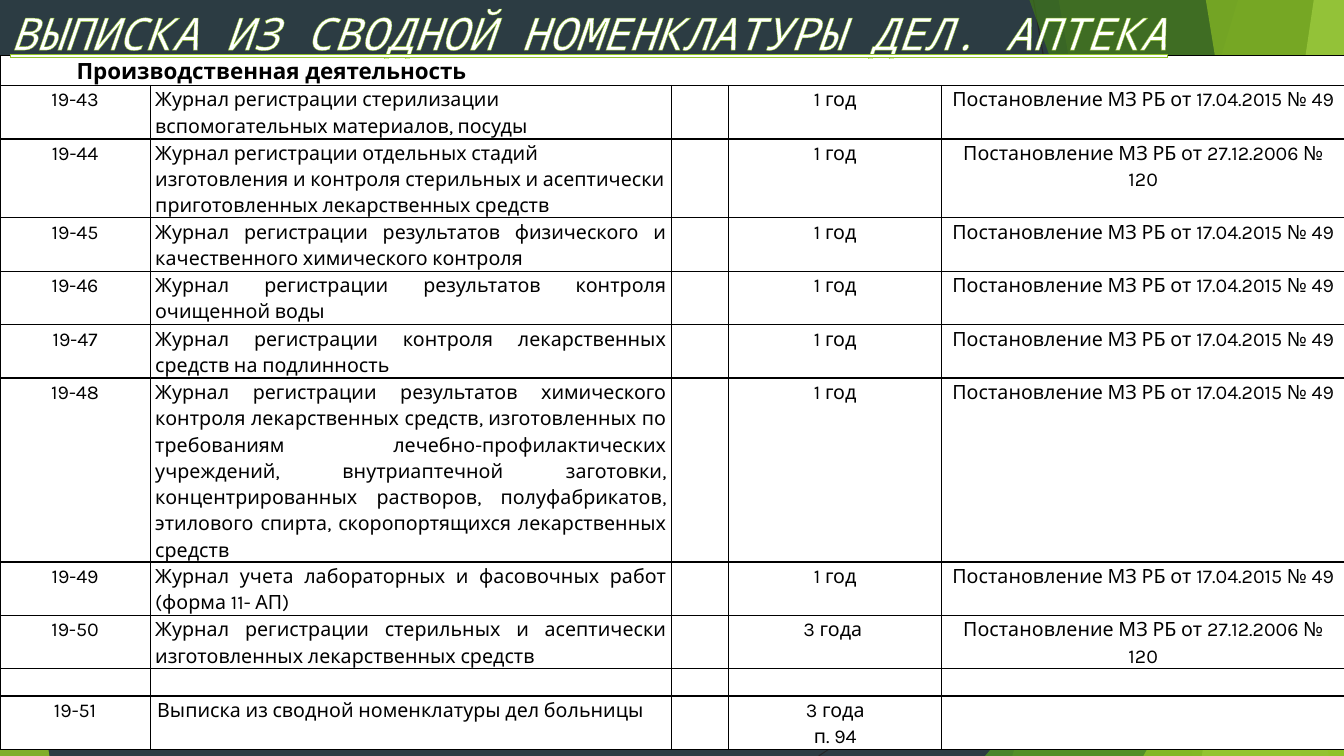
from lxml.etree import SubElement
from pptx import Presentation
from pptx.dml.color import RGBColor
from pptx.enum.shapes import MSO_CONNECTOR, MSO_SHAPE
from pptx.enum.text import MSO_ANCHOR, PP_ALIGN
from pptx.oxml.ns import qn
from pptx.util import Inches, Pt

WHITE = RGBColor(0xFF, 0xFF, 0xFF)
BLACK = RGBColor(0, 0, 0)
SLATE = RGBColor(0x2C, 0x3C, 0x43)
COAL = RGBColor(0x26, 0x26, 0x26)
LIME = RGBColor(0x90, 0xC2, 0x26)
GREEN = RGBColor(0x54, 0xA0, 0x21)
DARK = RGBColor(0x3F, 0x78, 0x19)
PALE = RGBColor(0xC0, 0xE4, 0x74)

WIDE, HIGH = 13.33, 7.5
TITLE = "ВЫПИСКА ИЗ СВОДНОЙ НОМЕНКЛАТУРЫ ДЕЛ. АПТЕКА"
SECTION = "Производственная деятельность"
ACT_2015 = "Постановление МЗ РБ от 17.04.2015 № 49"
ACT_2006 = "Постановление МЗ РБ от 27.12.2006 № 120"
LEFT, MID, FULL = PP_ALIGN.LEFT, PP_ALIGN.CENTER, PP_ALIGN.JUSTIFY

# index, journal, alignment of the journal, storage term, legal act, row height
RECORDS = [
    ("19-43", "Журнал регистрации стерилизации вспомогательных материалов, посуды",
     LEFT, "1 год", ACT_2015, 0.53),
    ("19-44", "Журнал регистрации отдельных стадий изготовления и контроля стерильных "
     "и асептически приготовленных лекарственных средств",
     LEFT, "1 год", ACT_2006, 0.53),
    ("19-45", "Журнал регистрации результатов физического и качественного "
     "химического контроля", FULL, "1 год", ACT_2015, 0.53),
    ("19-46", "Журнал регистрации результатов контроля очищенной воды",
     FULL, "1 год", ACT_2015, 0.53),
    ("19-47", "Журнал регистрации контроля лекарственных средств на подлинность",
     FULL, "1 год", ACT_2015, 0.53),
    ("19-48", "Журнал регистрации результатов химического контроля лекарственных "
     "средств, изготовленных по требованиям лечебно-профилактических учреждений, "
     "внутриаптечной заготовки, концентрированных растворов, полуфабрикатов, "
     "этилового спирта, скоропортящихся лекарственных средств",
     FULL, "1 год", ACT_2015, 1.62),
    ("19-49", "Журнал учета лабораторных и фасовочных работ (форма 11- АП)",
     FULL, "1 год", ACT_2015, 0.53),
    ("19-50", "Журнал регистрации стерильных и асептически изготовленных "
     "лекарственных средств", FULL, "3 года ", ACT_2006, 0.53),
    ("", "", FULL, "", "", 0.27),
    ("19-51", "Выписка из сводной номенклатуры дел больницы",
     FULL, "3 года\nп. 94", "", 0.53),
]
COLS = [1.49, 5.17, 0.57, 2.11, 4]
HEAD = 0.29

RAYS = [((10.25, 0), (11.58, HIGH)), ((WIDE, 4.03), (8.12, HIGH))]
# Bands reach the right edge: top left x, bottom left x, colour, opacity
# Corners: left, top, width, peak, colour, opacity
DECOR = [
    (12.28, 10.04, LIME, 30),
    (10.5, 11.83, LIME, 20),
    (9.77, 3.33, 3.56, 1, GREEN, 72),
    (10.21, 12.91, DARK, 70),
    (13.03, 11.92, PALE, 70),
    (11.96, 13.18, LIME, 65),
    (11.34, 3.93, 1.99, 1, LIME, 80),
    (0, 4.39, 0.49, 0, LIME, 85),
]


def paint(shape, color, alpha):
    shape.shadow.inherit = False
    shape.line.fill.background()
    shape.fill.solid()
    shape.fill.fore_color.rgb = color
    tint = shape.fill._xPr.find(".//" + qn("a:srgbClr"))
    SubElement(tint, qn("a:alpha"), val=str(alpha * 1000))


def add_ray(start, end):
    ray = slide.shapes.add_connector(
        MSO_CONNECTOR.STRAIGHT, *(Inches(v) for v in start + end))
    ray.line.color.rgb = COAL
    ray.line.width = Pt(0.75)
    SubElement(ray._element.spPr, qn("a:effectLst"))


def add_band(top, low, color, alpha):
    path = slide.shapes.build_freeform(Inches(top), 0)
    ends = [(WIDE, 0), (WIDE, HIGH), (low, HIGH)]
    path.add_line_segments([(Inches(x), Inches(y)) for x, y in ends])
    paint(path.convert_to_shape(), color, alpha)


def add_corner(left, top, width, peak, color, alpha):
    shape = slide.shapes.add_shape(
        MSO_SHAPE.ISOSCELES_TRIANGLE, Inches(left), Inches(top),
        Inches(width), Inches(HIGH - top))
    shape.adjustments[0] = peak
    paint(shape, color, alpha)


def outline(parent, tag, color, width):
    line = SubElement(parent, qn(tag), w=str(Pt(width)))
    fill = SubElement(line, qn("a:solidFill"))
    SubElement(fill, qn("a:srgbClr"), val=str(color))


def fill_cell(cell, text, align, size=14, bold=False, inset=0.05):
    cell.text = text
    cell.margin_left = cell.margin_right = Inches(inset)
    cell.margin_top = cell.margin_bottom = 0
    for para in cell.text_frame.paragraphs:
        para.alignment = align
        para.line_spacing = 1.15
        font = para.font
        font.name, font.size, font.bold = "Karla", Pt(size), bold
        font.color.rgb = BLACK
        if not text:
            SubElement(para._p, qn("a:endParaRPr"), sz=str(size * 100))
    props = cell._tc.get_or_add_tcPr()
    for side in "LRTB":
        outline(props, "a:ln" + side, BLACK, 1)
    cell.fill.solid()
    cell.fill.fore_color.rgb = WHITE


def add_records():
    sizes = [HEAD] + [record[-1] for record in RECORDS]
    frame = slide.shapes.add_table(
        len(sizes), len(COLS), 0, Inches(0.55), Inches(WIDE), Inches(sum(sizes)))
    table = frame.table
    for col, width in zip(table.columns, COLS):
        col.width = Inches(width)
    for row, height in zip(table.rows, sizes):
        row.height = Inches(height)
    for cell in table.rows[0].cells:
        fill_cell(cell, "", LEFT, 16, True)
    head = table.cell(0, 0)
    head.merge(table.cell(0, len(COLS) - 1))
    fill_head(head)
    for r, (index, name, align, term, act, _) in enumerate(RECORDS, 1):
        inset = 0.07 if r == len(RECORDS) else 0.05
        texts = (index, name, "", term, act)
        for c, text in enumerate(texts):
            fill_cell(table.cell(r, c), text, align if c == 1 else MID, inset=inset)


def fill_head(cell):
    para = cell.text_frame.paragraphs[0]
    para.add_run().text = SECTION
    props = para._p.get_or_add_pPr()
    props.set("marL", "0")
    props.set("indent", str(Inches(0.71)))


def set_title():
    title = slide.shapes.title
    title.left, title.top = 0, 0
    title.width, title.height = Inches(12.03), Inches(0.64)
    frame = title.text_frame
    frame.text = TITLE
    frame.word_wrap = True
    frame.vertical_anchor = MSO_ANCHOR.MIDDLE
    para = frame.paragraphs[0]
    para.alignment = LEFT
    font = para.runs[0].font
    outline(font._element, "a:ln", LIME, 0.8)
    font.name, font.size = "Noto Sans Mono", Pt(32)
    font.italic = font.underline = True
    font.color.rgb = WHITE
    slide.shapes._spTree.append(title._element)


deck = Presentation()
deck.slide_width, deck.slide_height = Inches(WIDE), Inches(HIGH)
slide = deck.slides.add_slide(deck.slide_layouts[5])
slide.background.fill.solid()
slide.background.fill.fore_color.rgb = SLATE
for start, end in RAYS:
    add_ray(start, end)
for part in DECOR:
    (add_band if len(part) == 4 else add_corner)(*part)
add_records()
set_title()
deck.save("out.pptx")
